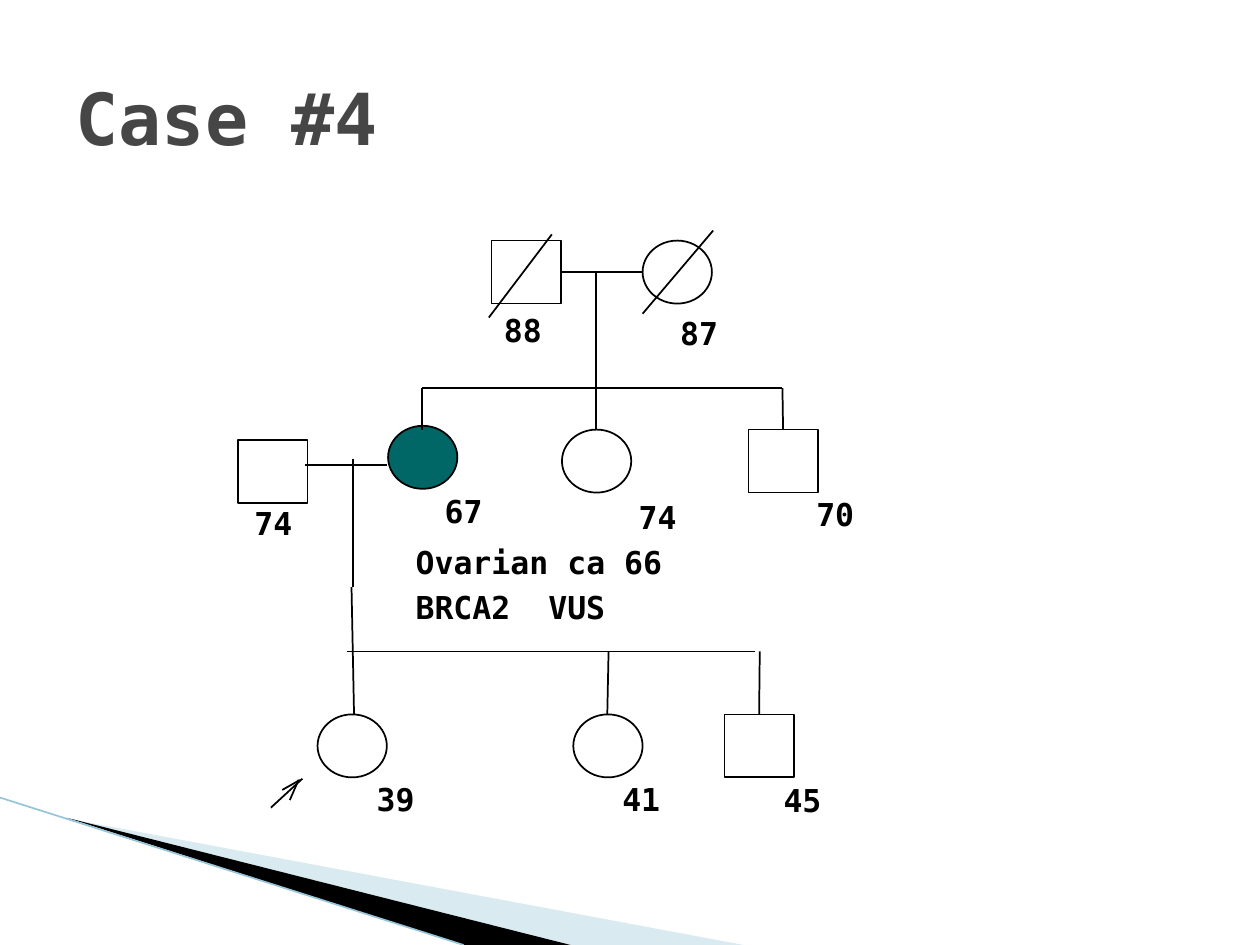
"""Build the Case #4 pedigree slide."""
from lxml import etree
from pptx import Presentation
from pptx.dml.color import RGBColor
from pptx.enum.shapes import MSO_CONNECTOR as CONN, MSO_SHAPE as SHAPE
from pptx.enum.text import MSO_ANCHOR as ANCHOR, PP_ALIGN as ALIGN
from pptx.oxml.ns import qn
from pptx.util import Inches, Pt

FONT = "DejaVu Sans Mono"


def rgb(value):
    return RGBColor.from_string(value)


def add_line(shapes, x1, y1, x2, y2, color="000000", width=1):
    cn = shapes.add_connector(CONN.STRAIGHT, Inches(x1), Inches(y1), Inches(x2), Inches(y2))
    cn.line.color.rgb = rgb(color)
    cn.line.width = Pt(width)
    etree.SubElement(cn._element.spPr, qn("a:effectLst"))
    return cn


prs = Presentation()
prs.slide_width, prs.slide_height = Inches(10), Inches(7.5)
s = prs.slides.add_slide(prs.slide_layouts[5])
shapes = s.shapes

wedges = [
    ([(0.55, 6.5), (5.9, 7.5), (4.53, 7.5)], "A0CBDC", 40),
    ([(0.53, 6.49), (4.53, 7.5), (3.68, 7.5)], "000000", 100),
]
for points, color, opacity in wedges:
    corners = [(Inches(x), Inches(y)) for x, y in points]
    fb = shapes.build_freeform(*corners[0])
    fb.add_line_segments(corners[1:], close=True)
    sp = fb.convert_to_shape()
    sp.shadow.inherit = False
    sp.fill.solid()
    sp.fill.fore_color.rgb = rgb(color)
    sp.line.fill.background()
    if opacity < 100:
        clr = sp._element.spPr.find(qn("a:solidFill"))[0]
        etree.SubElement(clr, qn("a:alpha"), val=str(opacity * 1000))
add_line(shapes, 0, 6.33, 3.68, 7.5, "97C5D8", 0.95)

title = shapes.title
title.left, title.top, title.width, title.height = Inches(0.5), Inches(0.3), Inches(9), Inches(1.25)
tf = title.text_frame
tf.text = "Case #4"
tf.vertical_anchor = ANCHOR.MIDDLE
p = tf.paragraphs[0]
p.alignment = ALIGN.LEFT
p.font.name, p.font.size, p.font.bold = FONT, Pt(41), True
p.font.color.rgb = rgb("464646")

people = {
    "grandmother": (SHAPE.OVAL, 5.1, 1.91),
    "grandfather": (SHAPE.RECTANGLE, 3.9, 1.91),
    "father": (SHAPE.RECTANGLE, 1.89, 3.49),
    "mother": (SHAPE.OVAL, 3.08, 3.38),
    "aunt": (SHAPE.OVAL, 4.46, 3.41),
    "uncle": (SHAPE.RECTANGLE, 5.94, 3.41),
    "patient": (SHAPE.OVAL, 2.52, 5.67),
    "sister": (SHAPE.OVAL, 4.55, 5.67),
    "brother": (SHAPE.RECTANGLE, 5.75, 5.67),
}
family = {}
for name, (kind, x, y) in people.items():
    sp = shapes.add_shape(kind, Inches(x), Inches(y), Inches(0.55), Inches(0.5))
    sp.shadow.inherit = False
    sp.fill.background()
    sp.line.color.rgb = rgb("000000")
    sp.line.width = Pt(1)
    family[name] = sp
family["mother"].fill.solid()
family["mother"].fill.fore_color.rgb = rgb("006666")

joined = [
    ("grandfather", 3, 4.45, 2.16, 5.1, 2.16),
    ("uncle", 0, 6.21, 3.41, 6.21, 3.08),
    ("brother", 0, 6.03, 5.67, 6.03, 5.17),
]
for name, site, *ends in joined:
    add_line(shapes, *ends).begin_connect(family[name], site)

lines = [
    (4.73, 2.16, 4.73, 3.08), (3.35, 3.08, 6.21, 3.08),
    (3.35, 3.41, 3.35, 3.08), (4.73, 3.41, 4.73, 3.08),
    (2.42, 3.69, 3.07, 3.69), (2.8, 3.64, 2.8, 4.66),
    (2.81, 5.67, 2.79, 4.66), (2.75, 5.17, 5.99, 5.17),
    (4.82, 5.67, 4.83, 5.17),
    (5.1, 2.49, 5.66, 1.83), (3.88, 2.52, 4.38, 1.86),
    (2.15, 6.41, 2.4, 6.18), (2.24, 6.27, 2.38, 6.19), (2.3, 6.35, 2.37, 6.19),
]
for ends in lines:
    add_line(shapes, *ends)

labels = [
    ("88", 3.9, 2.42, 0.75), ("87", 5.3, 2.44, 0.9),
    ("74", 1.92, 3.95, 0.75), ("67", 3.43, 3.86, 0.75),
    ("74", 4.97, 3.9, 0.75), ("70", 6.38, 3.88, 0.75),
    ("Ovarian ca 66", 3.2, 4.26, 2.18), ("BRCA2  VUS", 3.2, 4.62, 3.56),
    ("39", 2.89, 6.14, 0.75), ("41", 4.84, 6.14, 0.75), ("45", 6.12, 6.15, 0.75),
]
for text, x, y, width in labels:
    tf = shapes.add_textbox(Inches(x), Inches(y), Inches(width), Inches(0.4)).text_frame
    tf.word_wrap = True
    tf.text = text
    r = tf.paragraphs[0].runs[0]
    r.font.name, r.font.size, r.font.bold = FONT, Pt(18), True
    r.font.color.rgb = rgb("000000")

prs.save("out.pptx")
